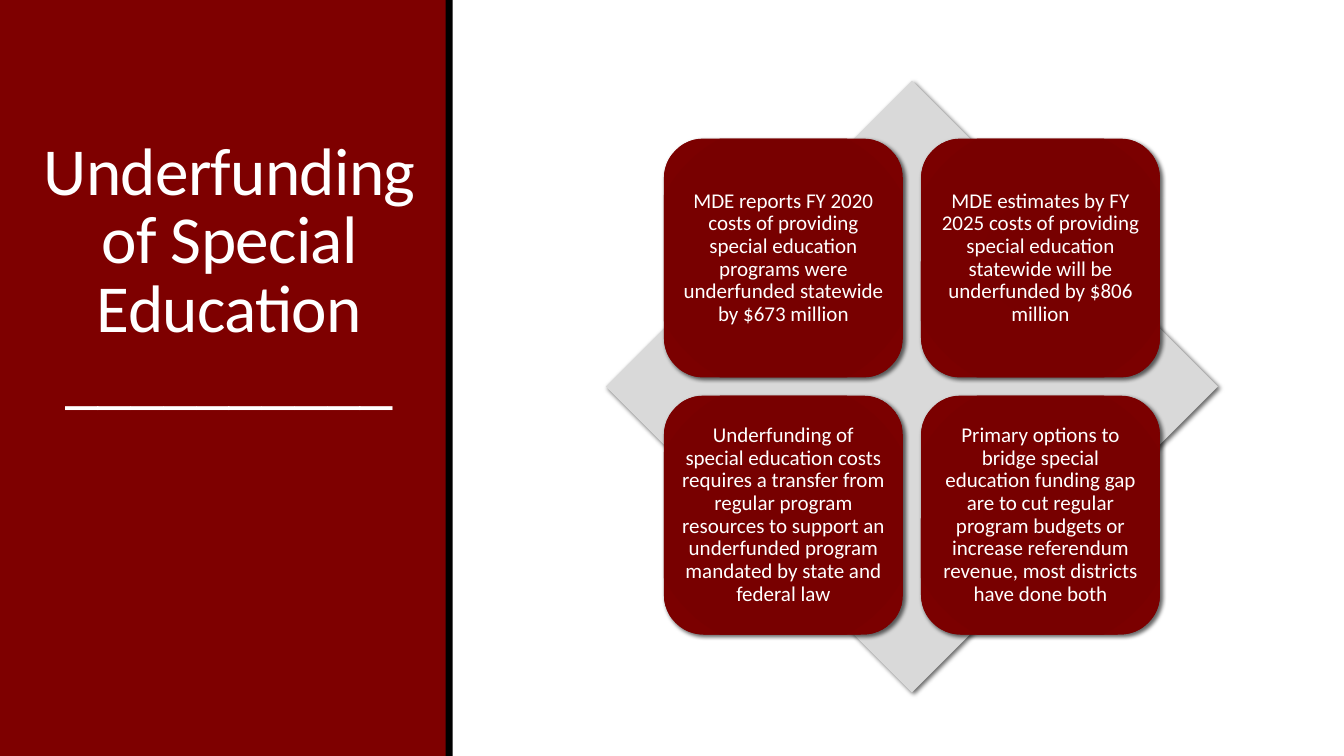
from lxml import etree
from pptx import Presentation
from pptx import util as u
from pptx.dml.color import RGBColor
from pptx.enum import shapes, text
from pptx.oxml.ns import nsdecls, qn

FONT = "Calibri"
WHITE, BLACK, MAROON, GREY = "FFFFFF", "000000", "7E0000", "D9D9D9"
CARD_STOPS = [(0, "750000"), (34, "770000"), (70, "780000"), (100, MAROON)]
CARD_TEXTS = [
    "MDE reports FY 2020 costs of providing special education programs were "
    "underfunded statewide by $673 million",
    "MDE estimates by FY 2025 costs of providing special education statewide "
    "will be underfunded by $806 million",
    "Underfunding of special education costs requires a transfer from regular "
    "program resources to support an underfunded program mandated by state and federal law",
    "Primary options to bridge special education funding gap are to cut regular "
    "program budgets or increase referendum revenue, most districts have done both",
]


def color(value):
    return RGBColor.from_string(value)


def add_shape(page, kind, left, top, width, height, fill=None):
    shape = page.shapes.add_shape(kind, *map(u.Inches, (left, top, width, height)))
    shape.shadow.inherit = False
    if fill:
        shape.fill.solid()
        shape.fill.fore_color.rgb = color(fill)
    shape.line.fill.background()
    return shape


def add_shadow(shape):
    effects = shape._element.spPr.find(qn("a:effectLst"))
    effects.append(etree.fromstring(
        f'<a:outerShdw {nsdecls("a")} blurRad="{u.Pt(3)}" dist="{u.Pt(2)}" '
        f'dir="{45 * 60000}" algn="ctr" rotWithShape="0"><a:srgbClr val="{BLACK}">'
        '<a:alpha val="60000"/></a:srgbClr></a:outerShdw>'))


def fill_radial(shape, stops):
    """Give the shape a circular gradient of (percent, colour) stops."""
    stop_xml = "".join(
        f'<a:gs pos="{percent * 1000}"><a:srgbClr val="{value}"/></a:gs>'
        for percent, value in stops)
    gradient = etree.fromstring(
        f'<a:gradFill {nsdecls("a")} rotWithShape="1"><a:gsLst>{stop_xml}</a:gsLst>'
        '<a:path path="circle"><a:fillToRect l="100000" t="100000" r="100000" '
        'b="100000"/></a:path></a:gradFill>')
    shape._element.spPr.find(qn("a:prstGeom")).addnext(gradient)


def add_run(para, words, size):
    span = para.add_run()
    span.text = words
    span.font.name = FONT
    span.font.size = u.Pt(size)
    span.font.color.rgb = color(WHITE)
    return span


def center_text(frame, line_spacing):
    """Centre the frame's text both ways and return its first paragraph."""
    frame.word_wrap = True
    frame.auto_size = text.MSO_AUTO_SIZE.NONE
    frame.vertical_anchor = text.MSO_ANCHOR.MIDDLE
    para = frame.paragraphs[0]
    para.alignment = text.PP_ALIGN.CENTER
    para.line_spacing = line_spacing
    return para


def add_title_panel(page, left, top, width, height):
    rectangle = shapes.MSO_SHAPE.RECTANGLE
    add_shape(page, rectangle, left, top, width, height, MAROON)
    add_shape(page, rectangle, left + width - 0.01, top, 0.07, height, BLACK)

    title = page.shapes.title
    title.left, title.top = u.Inches(left + 0.32), u.Inches(top + 0.65)
    title.width, title.height = u.Inches(3.91), u.Inches(4.21)
    para = center_text(title.text_frame, 0.85)
    spans = [add_run(para, "Underfunding of Special Education", 48)]
    para.add_line_break()
    spans.append(add_run(para, "_" * 10, 48))
    for span in spans:
        span.font._element.set("spc", "-50")
    page.shapes._spTree.append(title._element)  # bring in front of the panel


def add_card(page, left, top, size, words):
    card = add_shape(page, shapes.MSO_SHAPE.ROUNDED_RECTANGLE, left, top, size, size)
    fill_radial(card, CARD_STOPS)
    add_shadow(card)
    frame = card.text_frame
    frame.margin_left = frame.margin_right = u.Inches(0.06)
    frame.margin_top = frame.margin_bottom = u.Inches(0.06)
    add_run(center_text(frame, 0.9), words, 15)


def add_card_matrix(page, left, top, size):
    """Draw a diamond with a centred two-by-two grid of cards over it."""
    diamond = add_shape(page, shapes.MSO_SHAPE.DIAMOND, left, top, size, size, GREY)
    add_shadow(diamond)
    card_size, pitch = 2.37, 2.55
    margin = (size - card_size - pitch) / 2
    for index, words in enumerate(CARD_TEXTS):
        row, column = divmod(index, 2)
        add_card(page, left + margin + column * pitch, top + margin + row * pitch,
                 card_size, words)


def main():
    deck = Presentation()
    deck.slide_width, deck.slide_height = u.Inches(13.33), u.Inches(7.5)
    page = deck.slides.add_slide(deck.slide_layouts[5])
    add_title_panel(page, 0, 0, 4.43, 7.5)
    add_card_matrix(page, 6.01, 0.8, 6.07)
    deck.save("out.pptx")


if __name__ == "__main__":
    main()
